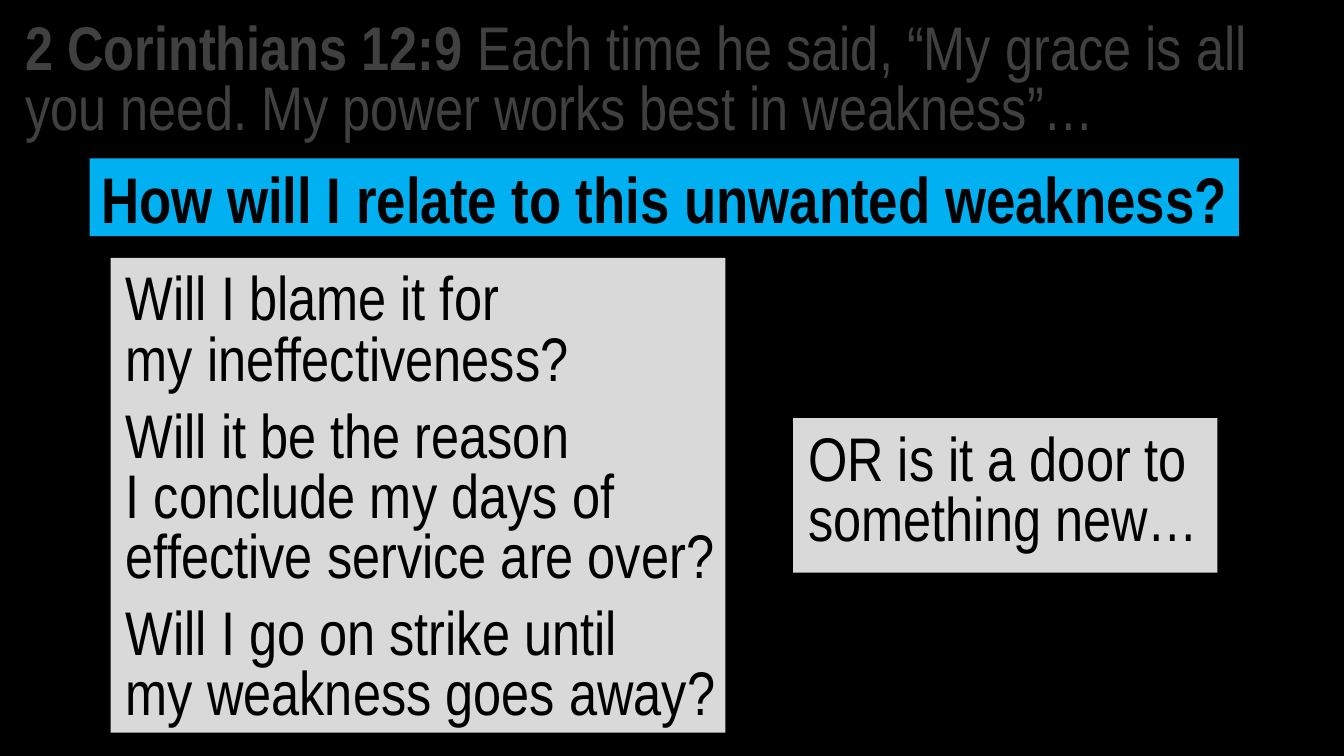
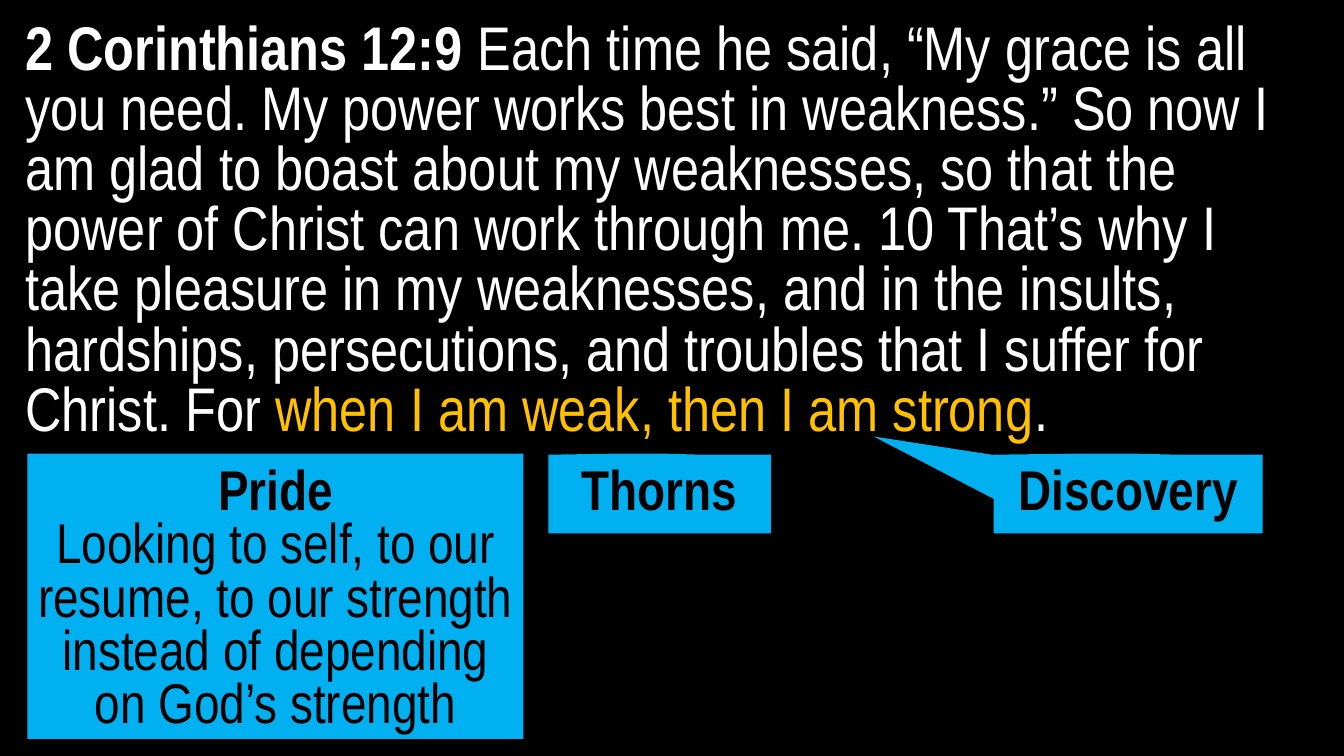
from dataclasses import dataclass

from pptx import Presentation
from pptx.dml.color import RGBColor
from pptx.enum import shapes, text
from pptx.util import Cm, Pt


@dataclass(frozen=True)
class Theme:
    font: str = "Arial Narrow"
    background: str = "000000"
    ink: str = "000000"
    verse: str = "FFFFFF"
    dimmed: str = "404040"
    emphasis: str = "FFC000"
    accent: str = "00B0F0"
    panel: str = "D9D9D9"
    body: tuple = (44, 43)
    heading: tuple = (46, 45)
    label: tuple = (40, 38)


THEME = Theme()
LEFT, CENTER = text.PP_ALIGN.LEFT, text.PP_ALIGN.CENTER
VERSE_BOX = (0.28, 0.43, 32.92, 18.62)
REFERENCE = "2 Corinthians 12:9"


def color(value):
    return RGBColor.from_string(value)


def blank_slide(deck):
    slide = deck.slides.add_slide(deck.slide_layouts[6])
    slide.background.fill.solid()
    slide.background.fill.fore_color.rgb = color(THEME.background)
    return slide


def set_frame(frame, insets):
    frame.word_wrap = True
    frame.vertical_anchor = text.MSO_ANCHOR.TOP
    (frame.margin_left, frame.margin_top,
     frame.margin_right, frame.margin_bottom) = map(Cm, insets)


def style(paragraph, sizes, ink, bold=False, align=LEFT, after=0):
    size, spacing = sizes
    paragraph.alignment = align
    paragraph.line_spacing = Pt(spacing)
    paragraph.space_after = Pt(after)
    paragraph.font.name = THEME.font
    paragraph.font.size = Pt(size)
    paragraph.font.bold = bold
    paragraph.font.color.rgb = color(ink)


def paint(shape, fill):
    shape.shadow.inherit = False
    shape.fill.solid()
    shape.fill.fore_color.rgb = color(fill)
    shape.line.fill.background()


def write(shape, lines, sizes, align=LEFT, bold_first=False, after=0):
    frame = shape.text_frame
    set_frame(frame, (0.13 if align == CENTER else 0.38, 0.38, 0.13, 0.13))
    for index, line in enumerate(lines):
        paragraph = frame.paragraphs[0] if index == 0 else frame.add_paragraph()
        paragraph.text = line
        style(paragraph, sizes, THEME.ink, bold_first and index == 0, align, after)


def add_verse(slide, box, ink, passages):
    frame = slide.shapes.add_textbox(*map(Cm, box)).text_frame
    set_frame(frame, (0.36, 0.13, 0.25, 0.13))
    paragraph = frame.paragraphs[0]
    style(paragraph, THEME.body, ink)
    reference = paragraph.add_run()
    reference.text = REFERENCE
    reference.font.bold = True
    for words, highlight in passages:
        passage = paragraph.add_run()
        passage.text = words
        if highlight:
            passage.font.color.rgb = color(highlight)


def add_panel(slide, box, fill, lines, sizes, **options):
    panel = slide.shapes.add_shape(shapes.MSO_SHAPE.RECTANGLE, *map(Cm, box))
    paint(panel, fill)
    write(panel, lines, sizes, **options)


def add_outline(slide, origin, points):
    left, top = origin
    start, *rest = [(Cm(left + x), Cm(top + y)) for x, y in points]
    builder = slide.shapes.build_freeform(*start)
    builder.add_line_segments(rest, close=True)
    outline = builder.convert_to_shape()
    paint(outline, THEME.accent)
    return outline


def add_label(slide, box, word):
    left, top, width, height = box
    rim = 0.03
    points = [(0, rim), (0.32 * width, 0), (0.51 * width, 0), (0.69 * width, rim),
              (width, rim), (width, height), (0, height)]
    label = add_outline(slide, (left, top), points)
    write(label, [word], THEME.label, align=CENTER, bold_first=True)


def add_callout(slide, box, word):
    add_label(slide, box, word)
    add_outline(slide, box[:2], [(0.74, 0.15), (-3.02, -0.43), (0.25, 1.27), (0.61, 0.2)])


def build_question_slide(deck):
    slide = blank_slide(deck)
    add_verse(slide, VERSE_BOX, THEME.dimmed, [
        (" Each time he said, “My grace is all you need. "
         "My power works best in weakness”…", None)])
    add_panel(slide, (2.26, 3.99, 28.96, 1.96), THEME.accent,
              ["How will I relate to this unwanted weakness?"],
              THEME.heading, align=CENTER, bold_first=True)
    add_panel(slide, (2.79, 6.5, 15.49, 11.96), THEME.panel,
              ["Will I blame it for\vmy ineffectiveness?",
               "Will it be the reason\vI conclude my days of effective service are over?",
               "Will I go on strike until\vmy weakness goes away?"],
              THEME.body, after=12)
    add_panel(slide, (19.99, 10.54, 10.69, 3.89), THEME.panel,
              ["OR is it a door to something new…"], THEME.body)


def build_discovery_slide(deck):
    slide = blank_slide(deck)
    add_verse(slide, VERSE_BOX, THEME.verse, [
        (" Each time he said, “My grace is all you need. My power works best in "
         "weakness.” So now I am glad to boast about my weaknesses, so that the "
         "power of Christ can work through me. 10 That’s why I take pleasure in my "
         "weaknesses, and in the insults, hardships, persecutions, and troubles "
         "that I suffer for Christ. For ", None),
        ("when I am weak, then I am strong", THEME.emphasis),
        (".", None)])
    top, label_height = 11.43, 2.01
    add_panel(slide, (0.69, top, 12.5, 7.19), THEME.accent,
              ["Pride", "Looking to self, to our resume, to our strength "
                        "instead of depending on God’s strength"],
              THEME.label, align=CENTER, bold_first=True)
    add_label(slide, (13.82, top, 5.61, label_height), "Thorns")
    add_callout(slide, (25.04, top, 6.78, label_height), "Discovery")


def main():
    deck = Presentation()
    deck.slide_width, deck.slide_height = Cm(33.87), Cm(19.05)
    build_question_slide(deck)
    build_discovery_slide(deck)
    deck.save("out.pptx")


if __name__ == "__main__":
    main()
